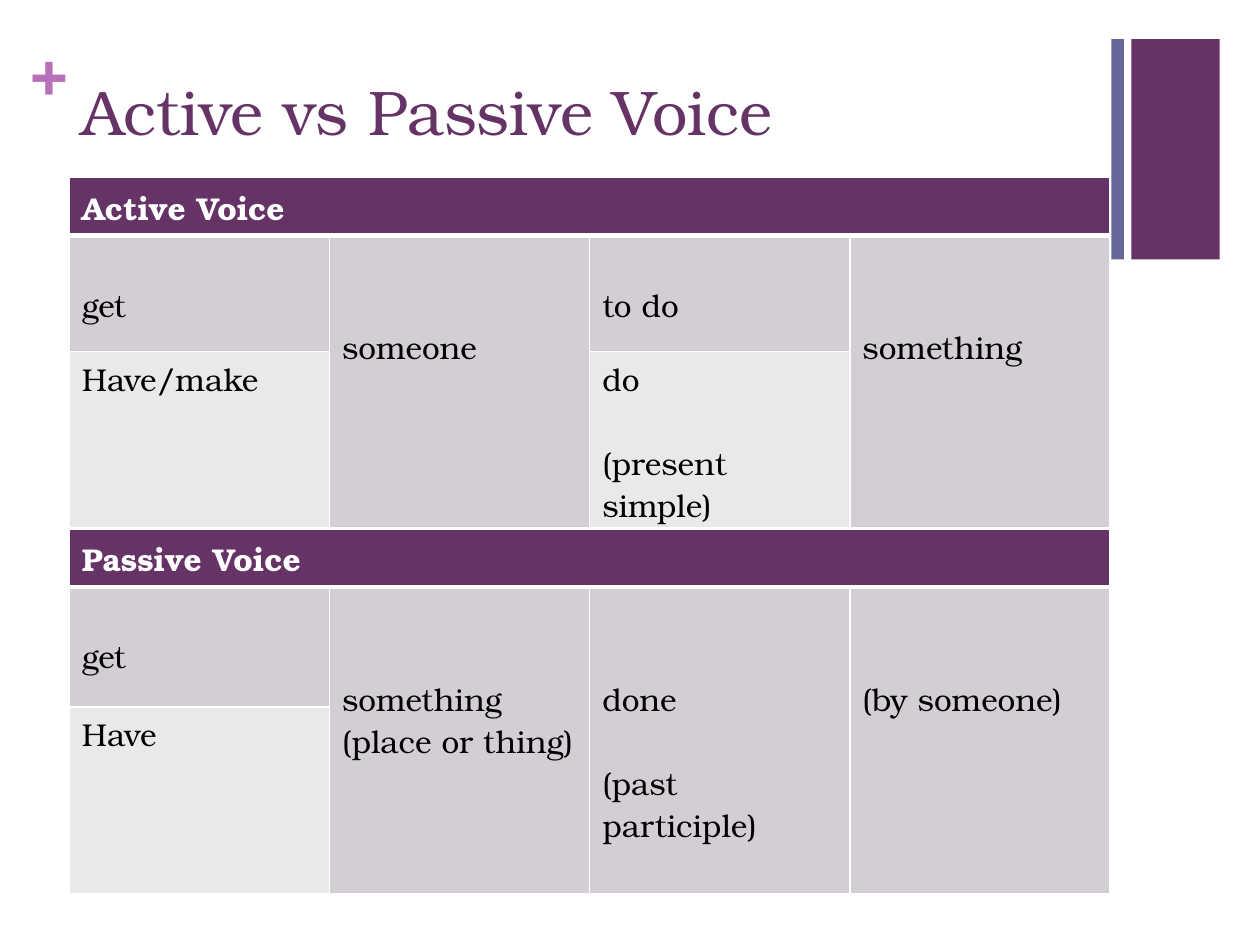
"""Build the Active vs Passive Voice grammar slide."""
import pptx
import pptx.util
import pptx.dml.color
import pptx.enum.shapes
import pptx.oxml
import pptx.oxml.ns

In, Pt, RGB = pptx.util.Inches, pptx.util.Pt, pptx.dml.color.RGBColor
FONT = "TeX Gyre Bonum"
PLUM, SLATE, ORCHID = RGB(0x66, 0x33, 0x66), RGB(0x66, 0x66, 0x99), RGB(0xB8, 0x70, 0xB8)
BAND, PALE = RGB(0xD3, 0xCE, 0xD3), RGB(0xEA, 0xE8, 0xEA)
WHITE, BLACK = RGB(255, 255, 255), RGB(0, 0, 0)
LINE = 24
LEFT, WIDTH, COLS = 0.55, 8.26, 4

BARS = [((8.98, 0.31, 0.7, 1.75), PLUM), ((8.82, 0.31, 0.1, 1.75), SLATE)]
LABELS = [
    ("+", (0.24, 0.25, 0.29, 0.61), 0, {"size": Pt(36), "bold": True}, ORCHID),
    ("Active vs Passive Voice", (LEFT, 0.53, WIDTH, 0.89), 0.1, {"size": Pt(36)}, PLUM),
]
# Each cell: row, column, rows spanned, lines left free above, [(text, lines free before)]
TABLES = [
    {"top": 1.41, "rows": (0.46, 0.92, 1.4), "title": "Active Voice", "cells": [
        (1, 0, 1, 1, [("get", 0)]),
        (1, 1, 2, 2, [("someone", 0)]),
        (1, 2, 1, 1, [("to do", 0)]),
        (1, 3, 2, 2, [("something", 0)]),
        (2, 0, 1, 0, [("Have/make", 0)]),
        (2, 2, 1, 0, [("do", 0), ("(present simple)", 1)])]},
    {"top": 4.2, "rows": (0.46, 0.95, 1.48), "title": "Passive Voice", "cells": [
        (1, 0, 1, 1, [("get", 0)]),
        (1, 1, 2, 2, [("something", 0), ("(place or thing)", 0)]),
        (1, 2, 2, 2, [("done", 0), ("(past participle)", 1)]),
        (1, 3, 2, 2, [("(by someone)", 0)]),
        (2, 0, 1, 0, [("Have", 0)])]},
]


def write(tf, lines, color, fmt):
    for i, (text, gap) in enumerate(lines):
        p = tf.paragraphs[0] if i == 0 else tf.add_paragraph()
        p.space_before = Pt(gap * LINE)
        r = p.add_run()
        r.text = text
        for name, value in {"name": FONT, **fmt}.items():
            setattr(r.font, name, value)
        r.font.color.rgb = color


def paint(cell, color, top, bottom):
    tc_pr = cell._tc.get_or_add_tcPr()
    for side, width in zip("LRTB", (1, 1, top, bottom)):
        tc_pr.append(pptx.oxml.parse_xml(
            f'<a:ln{side} {pptx.oxml.ns.nsdecls("a")} w="{Pt(width)}">'
            f'<a:solidFill><a:srgbClr val="{WHITE}"/></a:solidFill></a:ln{side}>'))
    cell.fill.solid()
    cell.fill.fore_color.rgb = color


def add_voice_table(slide, top, rows, title, cells):
    tbl = slide.shapes.add_table(len(rows), COLS, In(LEFT), In(top), In(WIDTH), In(sum(rows))).table
    for col in tbl.columns:
        col.width = In(WIDTH / COLS)
    spans = {(row, col): n for row, col, n, _, _ in cells}
    for i, height in enumerate(rows):
        tbl.rows[i].height = In(height)
        for j in range(COLS):
            color = PLUM if i == 0 else PALE if spans.get((i, j)) and i == 2 else BAND
            paint(tbl.cell(i, j), color, 3 if i == 1 else 1, 3 if i == 0 else 1)
    tbl.cell(0, 0).merge(tbl.cell(0, COLS - 1))
    write(tbl.cell(0, 0).text_frame, [(title, 0)], WHITE, {"size": Pt(18), "bold": True})
    for row, col, n, free, lines in cells:
        cell = tbl.cell(row, col)
        if n > 1:
            cell.merge(tbl.cell(row + n - 1, col))
        cell.margin_top = In(0.05) + Pt(free * LINE)
        write(cell.text_frame, lines, BLACK, {"size": Pt(18), "bold": False})


def main():
    prs = pptx.Presentation()
    prs.slide_width, prs.slide_height = In(10), In(7.5)
    slide = prs.slides.add_slide(prs.slide_layouts[6])
    for box, color in BARS:
        sp = slide.shapes.add_shape(pptx.enum.shapes.MSO_SHAPE.RECTANGLE, *map(In, box))
        sp.shadow.inherit = False
        sp.fill.solid()
        sp.fill.fore_color.rgb = color
        sp.line.fill.background()
    for text, box, inset, fmt, color in LABELS:
        tf = slide.shapes.add_textbox(*map(In, box)).text_frame
        margins = {"margin_left": inset, "margin_right": inset,
                   "margin_top": inset / 2, "margin_bottom": inset / 2}
        for name, value in margins.items():
            setattr(tf, name, In(value))
        tf.word_wrap = True
        write(tf, [(text, 0)], color, fmt)
    for table in TABLES:
        add_voice_table(slide, **table)
    prs.save("out.pptx")


if __name__ == "__main__":
    main()
